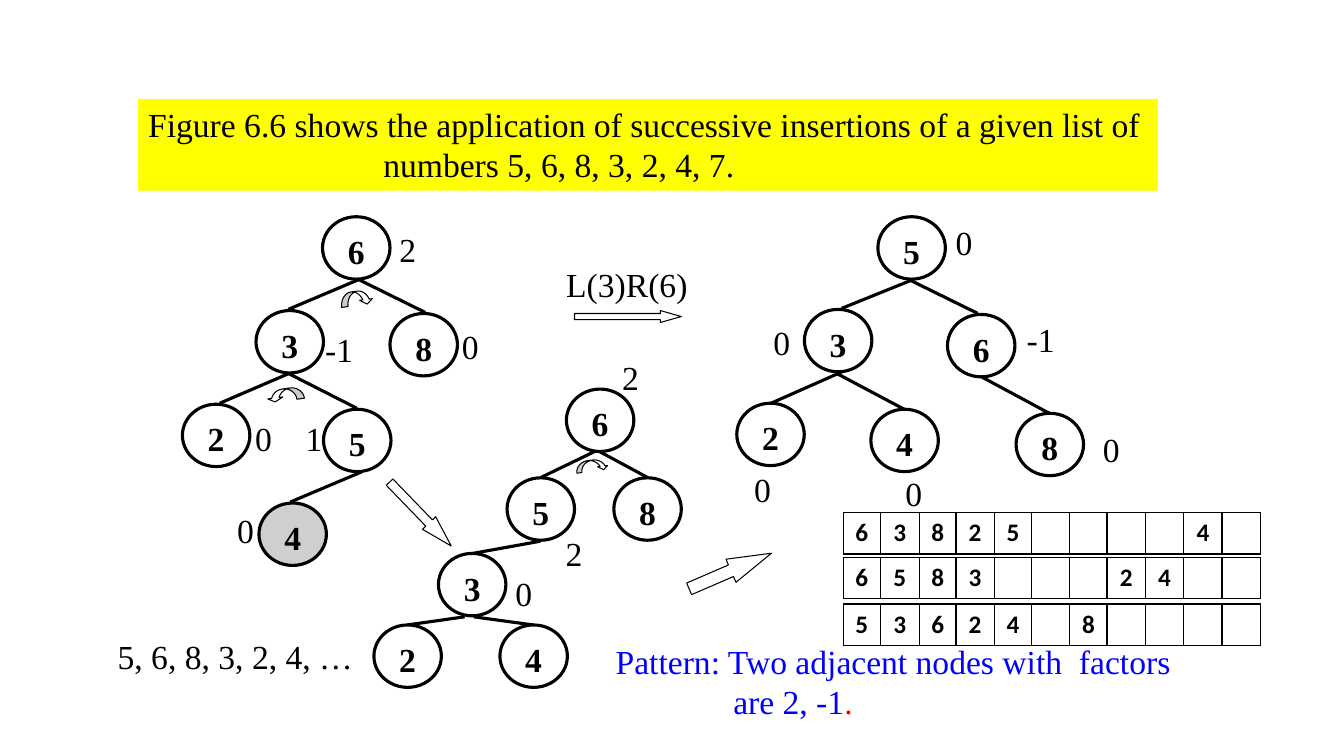
"""Build a slide on successive insertions into a height-balanced search tree."""
from lxml import etree
from pptx import Presentation
from pptx.dml.color import RGBColor
from pptx.enum.shapes import MSO_CONNECTOR, MSO_SHAPE
from pptx.enum.text import MSO_ANCHOR, MSO_AUTO_SIZE, PP_ALIGN
from pptx.oxml import parse_xml
from pptx.oxml.ns import nsdecls, qn
from pptx.util import Pt

BLACK = RGBColor(0x00, 0x00, 0x00)
WHITE = RGBColor(0xFF, 0xFF, 0xFF)
YELLOW = RGBColor(0xFF, 0xFF, 0x00)
GREY = RGBColor(0xD0, 0xCE, 0xCE)
BLUE = RGBColor(0x00, 0x00, 0xFF)
RED = RGBColor(0xFF, 0x00, 0x00)

ELLIPSE = MSO_SHAPE.OVAL
RIGHT_ARROW = MSO_SHAPE.RIGHT_ARROW
CURVED_ARROW = MSO_SHAPE.CURVED_RIGHT_ARROW
STRAIGHT = MSO_CONNECTOR.STRAIGHT
LEFT, CENTER = PP_ALIGN.LEFT, PP_ALIGN.CENTER
TOP = MSO_ANCHOR.TOP
NO_AUTOFIT = MSO_AUTO_SIZE.NONE

TITLE = ("Figure 6.6 shows the application of successive insertions of a given list of\n"
         "numbers 5, 6, 8, 3, 2, 4, 7.")
NEW_NODE = ("4", 185, 359.3)
NODES = [
    ("6", 230.4, 154.8), ("3", 182.9, 221.8), ("8", 278.6, 223.9),
    ("2", 130.3, 288.7), ("5", 231.1, 292.3),
    ("6", 404.6, 277.9), ("5", 362.2, 341.3), ("8", 438.5, 341.3),
    ("3", 313.2, 395.3), ("2", 267.1, 446.4), ("4", 357.1, 446.4),
    ("5", 627.1, 154.8), ("3", 574.6, 221), ("6", 676.8, 224.6),
    ("2", 526.3, 288), ("4", 622.1, 292.3), ("8", 725.8, 295.2),
]
EDGES = [
    (257, 199.4, 205.9, 221), (255.6, 199.4, 303.8, 223.2),
    (207.4, 266.4, 157, 288), (206.6, 267.1, 254.9, 291.6),
    (258.5, 337, 207.4, 358.6),
    (427.7, 321.1, 385.9, 341.3), (425.5, 321.1, 463, 341.3),
    (385.9, 386.6, 337.7, 395.3), (331.9, 440.6, 290.9, 446.4),
    (338.4, 440.6, 380.9, 446.4),
    (650.9, 200.2, 601.2, 220.3), (650.2, 200.2, 698.4, 223.9),
    (601.2, 265.7, 550.8, 288), (598.3, 267.1, 645.8, 292.3),
    (701.3, 269.3, 749.5, 295.2),
]
BALANCE_FACTORS = [
    ("2", 272.9, 159.8), ("-1", 223.9, 231.1), ("0", 317.5, 229),
    ("0", 169.9, 295.2), ("1", 205.9, 295.2), ("0", 157, 360.7),
    ("2", 432, 251.3), ("2", 391.7, 377.3), ("0", 355.7, 405.4),
    ("0", 670.3, 154.8), ("0", 540, 226.1), ("-1", 725, 223.9),
    ("0", 526.3, 331.2), ("0", 634.3, 334.1), ("0", 775.4, 303.1),
]
STEP_ARROWS = [
    ((410.4, 221.8, 76.3, 8.6), 0),
    ((268.6, 360.7, 63.4, 13), 46),
    ((489.6, 398.9, 64.1, 18), 336.6),
]
ROTATION_ARROWS = [
    ((249.8, 201.6, 10.1, 23), (0.454, 0.907, 0.333), True),
    ((199.4, 268.6, 8.6, 26.6), (0.632, 1.265, 0.333), False),
    ((419, 321.1, 7.9, 23), (0.454, 0.907, 0.333), True),
]
COLUMN_WIDTHS = [26.1, 28.1, 26.1, 27.4, 26.6, 27.4, 26.6] + [27.4] * 4
HEAP_ARRAYS = [
    (366.2, ["6", "3", "8", "2", "5", "", "", "", "", "4", ""]),
    (398.2, ["6", "5", "8", "3", "", "", "", "2", "4", "", ""]),
    (431.5, ["5", "3", "6", "2", "4", "", "8", "", "", "", ""]),
]


class TreeSlide:
    """Hold the style and the current slide, and draw each kind of element."""

    font, size, line_width = "Times New Roman", 24, 2.25
    node_size = (48.2, 44.6)

    def __init__(self, presentation):
        self.slide = presentation.slides.add_slide(presentation.slide_layouts[5])
        self.shapes = self.slide.shapes

    def format_text(self, paragraph, color=BLACK, bold=False, align=LEFT, font=None, size=None):
        paragraph.alignment = align
        for run in paragraph.runs:
            run.font.name = font or self.font
            run.font.size = Pt(size or self.size)
            run.font.bold = bold
            run.font.color.rgb = color

    def indent(self, paragraph, distance):
        properties = paragraph._p.get_or_add_pPr()
        properties.set("marL", str(Pt(distance)))
        properties.set("indent", "0")

    def title(self, text, box, second_indent):
        title = self.shapes.title
        title.left, title.top, title.width, title.height = map(Pt, box)
        title.fill.solid()
        title.fill.fore_color.rgb = YELLOW
        frame = title.text_frame
        frame.text = text
        frame.word_wrap = True
        frame.auto_size = NO_AUTOFIT
        frame.vertical_anchor = TOP
        for paragraph in frame.paragraphs:
            self.format_text(paragraph)
        self.indent(frame.paragraphs[1], second_indent)

    def text(self, text, box, color=BLACK, align=LEFT, wrap=True):
        text_box = self.shapes.add_textbox(*map(Pt, box))
        frame = text_box.text_frame
        frame.text = text
        frame.word_wrap = wrap
        for paragraph in frame.paragraphs:
            self.format_text(paragraph, color, align=align)
        return frame

    def shape(self, kind, box, fill=WHITE, line_width=0.75, rotation=0):
        shape = self.shapes.add_shape(kind, *map(Pt, box))
        shape.shadow.inherit = False
        shape.fill.solid()
        shape.fill.fore_color.rgb = fill
        shape.line.color.rgb = BLACK
        shape.line.width = Pt(line_width)
        shape.rotation = rotation
        return shape

    def node(self, key, left, top, fill=WHITE):
        node = self.shape(ELLIPSE, (left, top, *self.node_size), fill, self.line_width)
        node.text_frame.text = key
        node.text_frame.vertical_anchor = TOP
        paragraph = node.text_frame.paragraphs[0]
        paragraph.space_after = Pt(8)
        self.format_text(paragraph, bold=True, align=CENTER)

    def edge(self, *ends):
        edge = self.shapes.add_connector(STRAIGHT, *map(Pt, ends))
        edge.line.color.rgb = BLACK
        edge.line.width = Pt(self.line_width)
        etree.SubElement(edge._element.spPr, qn("a:effectLst"))

    def arrow(self, kind, box, adjustments, rotation, flipped=False):
        arrow = self.shape(kind, box, rotation=rotation)
        for index, value in enumerate(adjustments):
            arrow.adjustments[index] = value
        if flipped:
            arrow._element.spPr.xfrm.set("flipV", "1")

    def array(self, values, left, top, widths, height):
        frame = self.shapes.add_table(1, len(values), Pt(left), Pt(top), Pt(sum(widths)), Pt(height))
        table = frame.table
        table.first_row = table.horz_banding = False
        table.rows[0].height = Pt(height)
        for column, width, cell, value in zip(table.columns, widths, table.rows[0].cells, values):
            column.width = Pt(width)
            cell.text = value
            self.format_text(cell.text_frame.paragraphs[0], BLACK, True, CENTER, "Calibri", 18)
            cell.fill.solid()
            cell.fill.fore_color.rgb = WHITE
            properties = cell._tc.get_or_add_tcPr()
            for index, side in enumerate("LRTB"):
                properties.insert(index, parse_xml(
                    f'<a:ln{side} {nsdecls("a")} w="{Pt(1)}"><a:solidFill>'
                    f'<a:srgbClr val="{BLACK}"/></a:solidFill></a:ln{side}>'))


def main():
    presentation = Presentation()
    presentation.slide_width, presentation.slide_height = Pt(960), Pt(540)
    slide = TreeSlide(presentation)
    slide.title(TITLE, (98.6, 70.6, 728.6, 65.5), 168)
    for edge in EDGES:
        slide.edge(*edge)
    for node in NODES:
        slide.node(*node)
    slide.node(*NEW_NODE, fill=GREY)
    for factor, left, top in BALANCE_FACTORS:
        slide.text(factor, (left, top, 36.7, 36), align=CENTER)
    for box, rotation in STEP_ARROWS:
        slide.arrow(RIGHT_ARROW, box, (0.5, 1.75), rotation)
    for box, adjustments, flipped in ROTATION_ARROWS:
        slide.arrow(CURVED_ARROW, box, adjustments, 82.6, flipped)
    slide.text("L(3)R(6)", (397.4, 185, 105.1, 36), wrap=False)
    slide.text("5, 6, 8, 3, 2, 4, …", (77, 450.7, 190.1, 36), wrap=False)
    pattern = slide.text("Pattern: Two adjacent nodes with  factors\nare 2, -1",
                         (432.7, 454.3, 427, 65.5), BLUE)
    conclusion = pattern.paragraphs[1]
    conclusion.add_run().text = "."
    slide.format_text(conclusion, BLUE)
    conclusion.runs[-1].font.color.rgb = RED
    slide.indent(conclusion, 84)
    for top, values in HEAP_ARRAYS:
        slide.array(values, 602.6, top, COLUMN_WIDTHS, 29.5)
    presentation.save("out.pptx")


if __name__ == "__main__":
    main()
